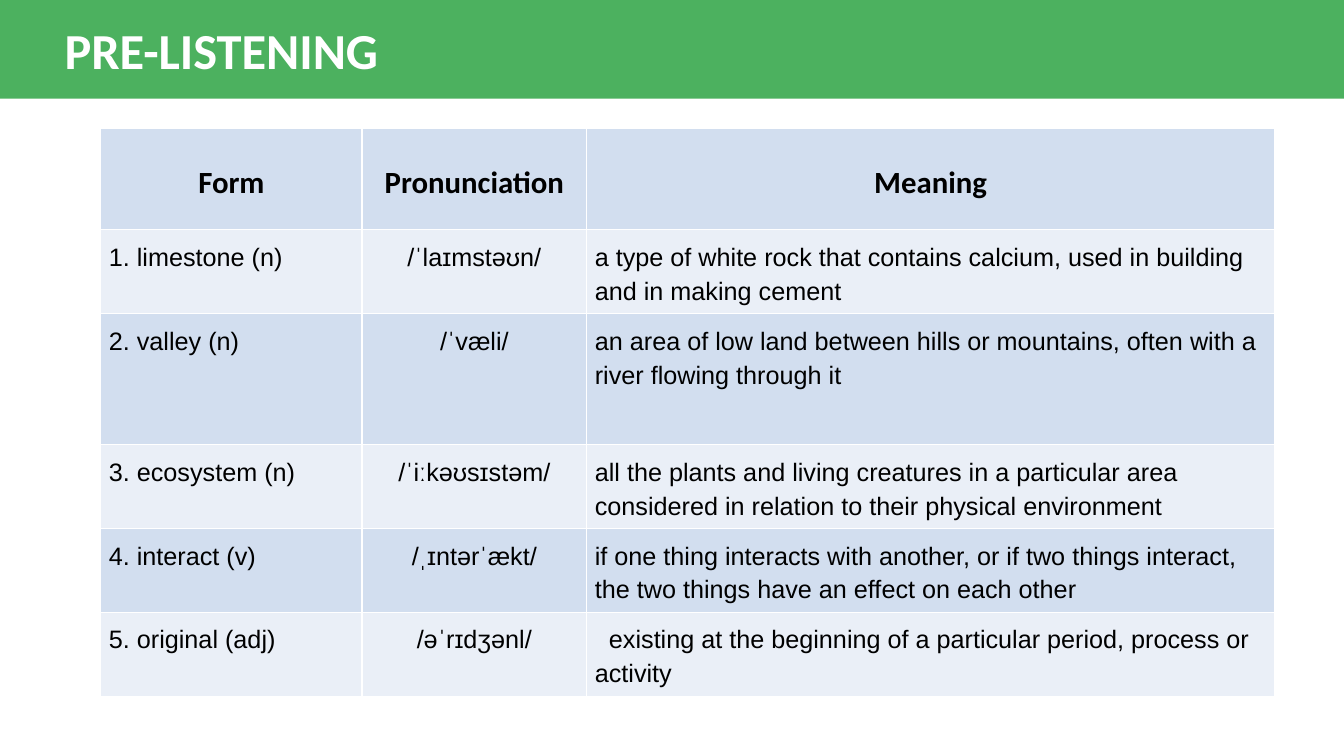
from lxml.etree import SubElement
from pptx import Presentation
from pptx.dml.color import RGBColor
from pptx.enum.shapes import MSO_SHAPE
from pptx.enum.text import MSO_ANCHOR as Anchor, PP_ALIGN as Align
from pptx.oxml.ns import qn
from pptx.util import Inches, Pt

COLORS = {
    "green": "4CB15F",
    "white": "FFFFFF",
    "black": "000000",
    "blue": "D2DEEF",
    "pale": "EAEFF7",
}
HEADINGS = ("Form", "Pronunciation", "Meaning")
VOCABULARY = [
    ("1. limestone (n)", "/ˈlaɪmstəʊn/",
     "a type of white rock that contains calcium, used in building and in making cement"),
    ("2. valley (n)", "/ˈvæli/",
     "an area of low land between hills or mountains, often with a river flowing through it"),
    ("3. ecosystem (n)", "/ˈiːkəʊsɪstəm/",
     "all the plants and living creatures in a particular area considered in relation "
     "to their physical environment"),
    ("4. interact (v)", "/ˌɪntərˈækt/",
     "if one thing interacts with another, or if two things interact, the two things "
     "have an effect on each other"),
    ("5. original (adj)", "/əˈrɪdʒənl/",
     "existing at the beginning of a particular period, process or activity"),
]
COLUMN_WIDTHS = (2.59, 2.23, 6.82)
ROW_HEIGHTS = (1.01, 0.8, 1.3, 0.8, 0.8, 0.8)


def color(name):
    """Return the named palette colour."""
    return RGBColor.from_string(COLORS[name])


def set_font(paragraph, family, size, color_name, bold):
    """Format a whole paragraph."""
    font = paragraph.font
    font.name, font.size, font.bold = family, Pt(size), bold
    font.color.rgb = color(color_name)


def indent(paragraph, left, first_line):
    """Set the left margin and first-line indent in inches."""
    properties = paragraph._p.get_or_add_pPr()
    properties.set("marL", str(Inches(left)))
    properties.set("indent", str(Inches(first_line)))


def outline_cell(cell):
    """Draw a thin white border on all four sides of a cell."""
    properties = cell._tc.get_or_add_tcPr()
    for side in ("lnL", "lnR", "lnT", "lnB"):
        line = SubElement(properties, qn(f"a:{side}"), w=str(Pt(1)))
        fill = SubElement(line, qn("a:solidFill"))
        SubElement(fill, qn("a:srgbClr"), val=COLORS["white"])


def add_header(slide, left, top, width, height):
    """Place the green band with the slide title on it."""
    band = slide.shapes.add_shape(
        MSO_SHAPE.RECTANGLE, Inches(left), Inches(top), Inches(width), Inches(height))
    band.shadow.inherit = False
    band.fill.solid()
    band.fill.fore_color.rgb = color("green")
    band.line.fill.background()

    title = slide.shapes.title
    slide.shapes.element.append(title.element)
    title.left, title.top = Inches(left + 0.54), Inches(top + 0.14)
    title.width, title.height = Inches(5), Inches(0.71)
    frame = title.text_frame
    frame.text = "PRE-LISTENING"
    frame.vertical_anchor = Anchor.TOP
    frame.paragraphs[0].alignment = Align.LEFT
    set_font(frame.paragraphs[0], "Calibri", 36, "white", True)


def fill_cell(cell, text, row, column):
    """Write and format one vocabulary cell by its row and column."""
    heading = row == 0
    centered = heading or column == 1
    outline_cell(cell)
    cell.fill.solid()
    cell.fill.fore_color.rgb = color("pale" if row % 2 else "blue")
    cell.margin_left = cell.margin_right = Inches(0.04 if centered else 0.08)
    cell.margin_top = cell.margin_bottom = Inches(0.08)
    cell.vertical_anchor = Anchor.MIDDLE if heading else Anchor.TOP
    cell.text = text
    paragraph = cell.text_frame.paragraphs[0]
    paragraph.alignment = Align.CENTER if centered else Align.LEFT
    paragraph.line_spacing = 1.2
    if heading:
        set_font(paragraph, "Calibri", 22, "black", True)
    else:
        set_font(paragraph, "Arial", 18, "black", False)
    if not heading and column == 0:
        indent(paragraph, 0.16, -0.16)
    elif row == len(VOCABULARY) and column == 2:
        indent(paragraph, 0, 0.14)


def add_vocabulary(slide, left, top, width, height):
    """Place the vocabulary table."""
    rows = [HEADINGS, *VOCABULARY]
    table = slide.shapes.add_table(
        len(rows), len(HEADINGS),
        Inches(left), Inches(top), Inches(width), Inches(height)).table
    for column, column_width in zip(table.columns, COLUMN_WIDTHS):
        column.width = Inches(column_width)
    for row, row_height in zip(table.rows, ROW_HEIGHTS):
        row.height = Inches(row_height)
    for r, texts in enumerate(rows):
        for c, text in enumerate(texts):
            fill_cell(table.cell(r, c), text, r, c)


def main():
    """Build and save the slide."""
    deck = Presentation()
    deck.slide_width, deck.slide_height = Inches(13.33), Inches(7.5)
    slide = deck.slides.add_slide(deck.slide_layouts[5])
    add_header(slide, 0, 0, 13.33, 0.98)
    add_vocabulary(slide, 1, 1.27, sum(COLUMN_WIDTHS), sum(ROW_HEIGHTS))
    deck.save("out.pptx")


if __name__ == "__main__":
    main()
